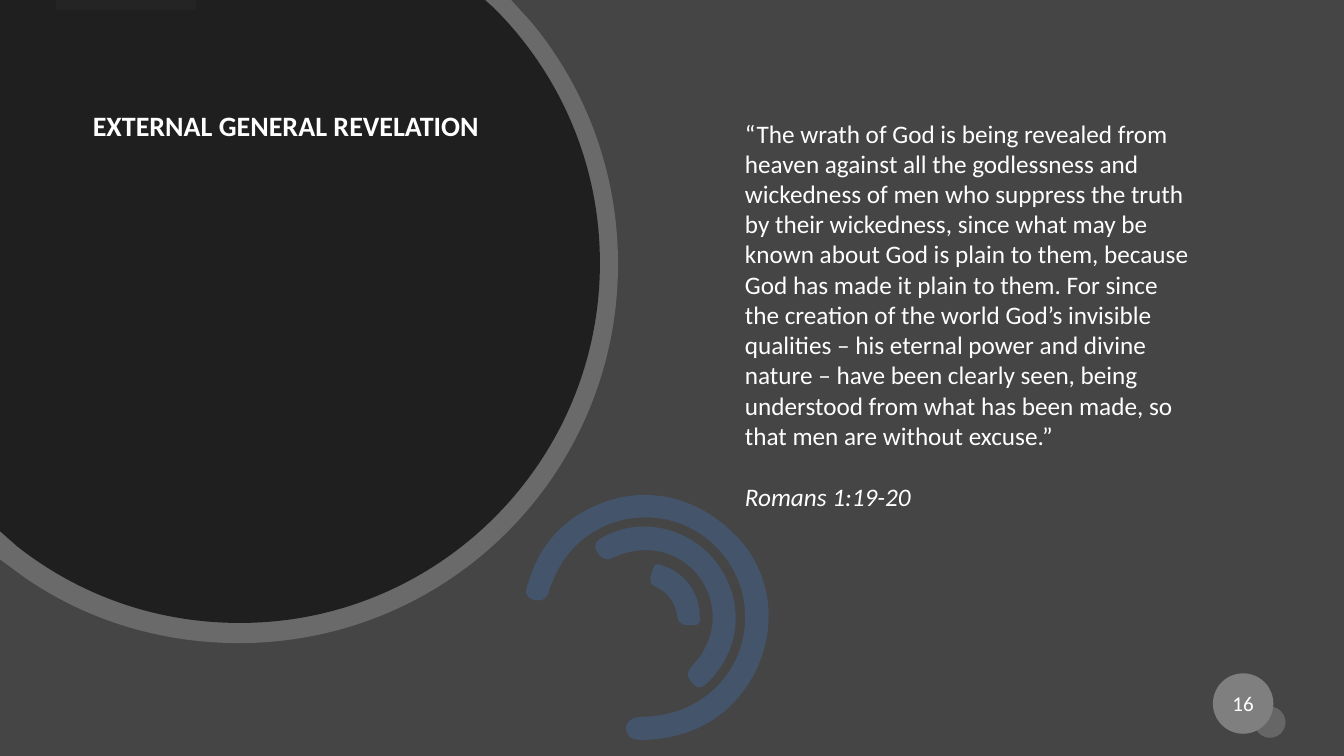
import pptx
import pptx.util
import pptx.dml.color
import pptx.enum.shapes
import pptx.enum.text
import pptx.oxml.ns
import lxml.etree

Inches = pptx.util.Inches
Pt = pptx.util.Pt
qn = pptx.oxml.ns.qn
OVAL = pptx.enum.shapes.MSO_SHAPE.OVAL
RECTANGLE = pptx.enum.shapes.MSO_SHAPE.RECTANGLE
MIDDLE = pptx.enum.text.MSO_ANCHOR.MIDDLE


def paint(shape, color, opacity=100):
    """Give a shape a plain fill, with no line or shadow; opacity in percent."""
    shape.shadow.inherit = False
    shape.line.fill.background()
    shape.fill.solid()
    shape.fill.fore_color.rgb = pptx.dml.color.RGBColor.from_string(color)
    if opacity < 100:
        tint = shape.element.spPr.find(qn("a:solidFill")).find(qn("a:srgbClr"))
        alpha = lxml.etree.SubElement(tint, qn("a:alpha"))
        alpha.set("val", str(opacity * 1000))


def draw_outline(shapes, start, segments):
    """Close an outline of segments: 2 numbers are a line, 6 a cubic curve."""
    builder = shapes.build_freeform(Inches(start[0]), Inches(start[1]), scale=1.0)
    builder.add_line_segments([tuple(map(Inches, segment[-2:])) for segment in segments], close=True)
    outline = builder.convert_to_shape()
    sides = list(outline.element.iter(qn("a:lnTo")))
    for side, segment in zip(sides, segments):
        if len(segment) == 2:
            continue
        curve = lxml.etree.Element(qn("a:cubicBezTo"))
        for x, y in zip(segment[::2], segment[1::2]):
            point = lxml.etree.SubElement(curve, qn("a:pt"))
            point.set("x", str(Inches(x) - outline.left))
            point.set("y", str(Inches(y) - outline.top))
        side.getparent().replace(side, curve)
    return outline


deck = pptx.Presentation()
deck.slide_width, deck.slide_height = Inches(13.33), Inches(7.5)
slide = deck.slides.add_slide(deck.slide_layouts[5])
shapes = slide.shapes
slide.background.fill.solid()
slide.background.fill.fore_color.rgb = pptx.dml.color.RGBColor.from_string("454545")

# Background accents
for preset, left, top, width, height in [
    (RECTANGLE, 0.56, -0.02, 1.38, 0.12),
    (OVAL, 12.44, 7.01, 0.31, 0.31),
]:
    accent = shapes.add_shape(preset, Inches(left), Inches(top), Inches(width), Inches(height))
    paint(accent, "666666")

# Three arcs, then the pale rim and the dark disc
outer_arc = [
    (7.65, 5.81, 7.7, 6.23, 7.49, 6.67), (7.26, 7.1, 6.89, 7.32, 6.4, 7.34),
    (6.34, 7.34, 6.27, 7.35, 6.23, 7.29), (6.17, 7.2, 6.24, 7.11, 6.37, 7.11),
    (6.93, 7.11, 7.37, 6.7, 7.39, 6.16), (7.41, 5.67, 7.06, 5.24, 6.59, 5.15),
    (6.1, 5.06, 5.63, 5.33, 5.47, 5.8), (5.46, 5.81, 5.45, 5.83, 5.45, 5.85),
    (5.43, 5.94, 5.38, 5.97, 5.29, 5.95), (5.19, 5.92, 5.21, 5.84, 5.24, 5.78),
    (5.35, 5.4, 5.6, 5.13, 5.97, 4.99), (6.49, 4.79, 7.06, 4.97, 7.43, 5.47),
]
middle_arc = [
    (7.38, 5.96, 7.35, 6.42, 7.05, 6.74), (7, 6.79, 6.95, 6.86, 6.88, 6.79),
    (6.81, 6.72, 6.8, 6.67, 6.88, 6.59), (7.11, 6.34, 7.13, 5.99, 6.94, 5.73),
    (6.75, 5.47, 6.41, 5.38, 6.09, 5.53), (6, 5.57, 5.96, 5.54, 5.92, 5.47),
    (5.87, 5.38, 5.94, 5.35, 6, 5.32), (6.37, 5.12, 6.86, 5.24, 7.12, 5.6),
]
inner_arc = [
    (6.9, 5.89, 6.94, 5.99, 6.94, 6.1), (6.94, 6.14, 6.96, 6.2, 6.89, 6.2),
    (6.82, 6.2, 6.73, 6.22, 6.72, 6.12), (6.7, 5.98, 6.63, 5.88, 6.5, 5.82),
    (6.41, 5.78, 6.46, 5.7, 6.48, 5.64), (6.5, 5.57, 6.55, 5.6, 6.59, 5.62),
    (6.7, 5.65, 6.77, 5.72, 6.84, 5.8),
]
rim = [
    (5.07, 0), (5.27, 0.22), (5.81, 0.87, 6.13, 1.71, 6.13, 2.62),
    (6.13, 4.7, 4.45, 6.38, 2.37, 6.38), (1.59, 6.38, 0.86, 6.15, 0.26, 5.74), (0, 5.55),
]
disc = [
    (4.81, 0), (4.9, 0.08), (5.55, 0.73, 5.95, 1.62, 5.95, 2.61),
    (5.95, 4.58, 4.35, 6.18, 2.38, 6.18), (1.54, 6.18, 0.78, 5.9, 0.17, 5.42), (0, 5.27),
]
for start, segments, color, opacity in [
    ((7.43, 5.47), outer_arc, "44546A", 100),
    ((7.12, 5.6), middle_arc, "44546A", 100),
    ((6.84, 5.8), inner_arc, "44546A", 100),
    ((0, 0), rim, "FFFFFF", 20),
    ((0, 0), disc, "0D0D0D", 80),
]:
    paint(draw_outline(shapes, start, segments), color, opacity)

# Title with an oval outline, brought in front of the disc
title = shapes.title
title.element.getparent().append(title.element)
title.left, title.top, title.width, title.height = map(Inches, (0.82, 0.69, 4.44, 1.14))
title_geometry = lxml.etree.SubElement(title.element.spPr, qn("a:prstGeom"))
title_geometry.set("prst", "ellipse")
title.text_frame.text = "EXTERNAL GENERAL REVELATION"
title.text_frame.vertical_anchor = MIDDLE
heading = title.text_frame.paragraphs[0]
heading.alignment = pptx.enum.text.PP_ALIGN.LEFT
heading.line_spacing = 0.9
heading.font.bold = True

# Slide number badge
badge = shapes.add_shape(OVAL, Inches(12.03), Inches(6.68), Inches(0.6), Inches(0.6))
paint(badge, "7F7F7F")
badge.text_frame.text = "16"
badge.text_frame.word_wrap = False
badge.text_frame.vertical_anchor = MIDDLE
badge_number = badge.text_frame.paragraphs[0]
badge_number.alignment = pptx.enum.text.PP_ALIGN.CENTER

# Scripture quotation
quotation = shapes.add_textbox(Inches(7.29), Inches(1.12), Inches(4.65), Inches(4.04)).text_frame
quotation.word_wrap = True
quotation.auto_size = pptx.enum.text.MSO_AUTO_SIZE.SHAPE_TO_FIT_TEXT
verse = quotation.paragraphs[0]
verse.text = (
    "“The wrath of God is being revealed from heaven against all the godlessness and "
    "wickedness of men who suppress the truth by their wickedness, since what may be known "
    "about God is plain to them, because God has made it plain to them. For since the "
    "creation of the world God’s invisible qualities – his eternal power and divine nature – "
    "have been clearly seen, being understood from what has been made, so that men are "
    "without excuse.”"
)
reference = quotation.add_paragraph()
reference.text = "Romans 1:19-20"
reference.space_before = Pt(22)
reference.font.italic = True

for paragraph, size in [(heading, 20), (badge_number, 15), (verse, 18), (reference, 18)]:
    paragraph.font.name = "Calibri"
    paragraph.font.size = Pt(size)
    paragraph.font.color.rgb = pptx.dml.color.RGBColor.from_string("FFFFFF")

deck.save("out.pptx")
